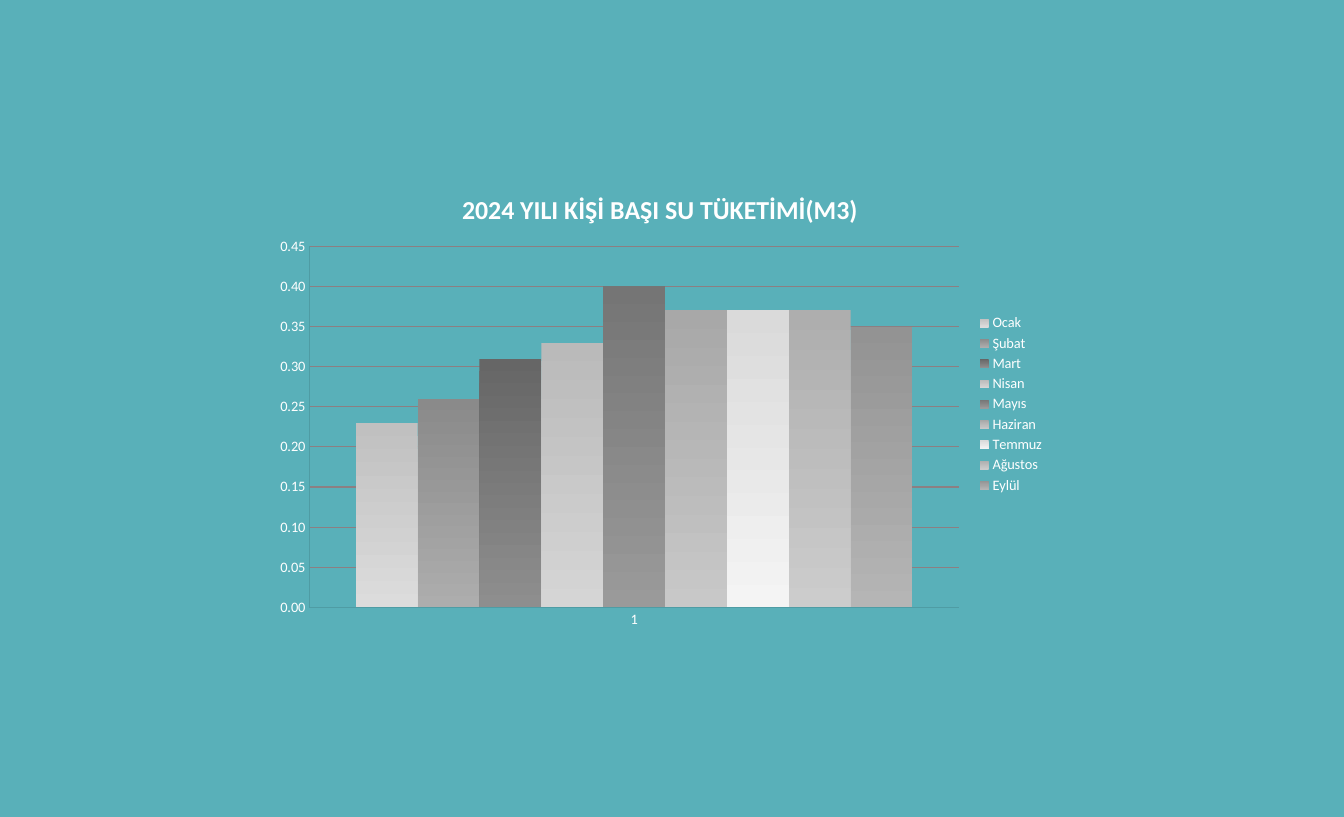
from pptx import Presentation
from pptx.chart.data import CategoryChartData
from pptx.dml.color import RGBColor
from pptx.enum.chart import XL_CHART_TYPE, XL_LEGEND_POSITION, XL_TICK_MARK
from pptx.oxml import parse_xml
from pptx.oxml.ns import nsdecls
from pptx.util import Cm, Inches, Pt

TITLE = "2024 YILI KİŞİ BAŞI SU TÜKETİMİ(M3)"
# month, consumption, top and bottom colour of the column
MONTHS = [
    ("Ocak", 0.23, "C0C0C0", "DCDCDC"),
    ("Şubat", 0.26, "8A8A8A", "ADADAD"),
    ("Mart", 0.31, "666666", "8E8E8E"),
    ("Nisan", 0.33, "BABABA", "D5D5D5"),
    ("Mayıs", 0.40, "757575", "9A9A9A"),
    ("Haziran", 0.37, "A8A8A8", "C8C8C8"),
    ("Temmuz", 0.37, "DADADA", "F4F4F4"),
    ("Ağustos", 0.37, "AEAEAE", "CCCCCC"),
    ("Eylül", 0.35, "939393", "B5B5B5"),
]
BACKGROUND, TEXT, GRID, AXIS = "59B0B9", "FFFFFF", "8C7F82", "4F9CA4"
SLIDE_SIZE_CM = (33, 20.05)
CHART_BOX = (2.56, 1.66, 7.64, 4.49)
PLOT_BOX = (2.99, 2.38, 6.28, 3.49)


def paint(color_format, hex_color):
    color_format.rgb = RGBColor.from_string(hex_color)


def style_font(font, size, bold=False):
    font.name = "Calibri"
    font.size = Pt(size)
    font.bold = bold
    paint(font.color, TEXT)


def style_line(line, hex_color):
    paint(line.color, hex_color)
    line.width = Pt(0.75)


def place_plot(chart):
    """Fix the inner plot area as fractions of the chart box."""
    left, top, width, height = CHART_BOX
    x, y, w, h = PLOT_BOX
    fractions = {"x": (x - left) / width, "y": (y - top) / height,
                 "w": w / width, "h": h / height}
    modes = "".join(f'<c:{axis}Mode val="edge"/>' for axis in "xy")
    sizes = "".join(f'<c:{key} val="{part:.4f}"/>' for key, part in fractions.items())
    layout = parse_xml(
        f'<c:layout {nsdecls("c")}><c:manualLayout><c:layoutTarget val="inner"/>'
        f"{modes}{sizes}</c:manualLayout></c:layout>")
    plot_area = chart.plots[0]._element.getparent()
    for old in plot_area.findall(layout.tag):
        plot_area.remove(old)
    plot_area.insert(0, layout)


def add_consumption_chart(slide):
    consumption = CategoryChartData(number_format="0.00")
    consumption.categories = ["1"]
    for month, value, *_ in MONTHS:
        consumption.add_series(month, [value])
    chart = slide.shapes.add_chart(
        XL_CHART_TYPE.COLUMN_CLUSTERED, *map(Inches, CHART_BOX), consumption).chart
    style_font(chart.font, 10)

    chart.has_title = True
    title = chart.chart_title.text_frame.paragraphs[0].add_run()
    title.text = TITLE
    style_font(title.font, 18, bold=True)
    chart.chart_title.include_in_layout = False

    chart.has_legend = True
    chart.legend.position = XL_LEGEND_POSITION.RIGHT
    chart.legend.include_in_layout = False
    style_font(chart.legend.font, 10)

    columns = chart.plots[0]
    columns.gap_width = 150
    columns.overlap = 0
    columns.vary_by_categories = False
    for series, (_, _, *shades) in zip(columns.series, MONTHS):
        fill = series.format.fill
        fill.gradient()
        fill.gradient_angle = 270
        for stop, shade in zip(fill.gradient_stops, shades):
            paint(stop.color, shade)

    for axis in (chart.category_axis, chart.value_axis):
        axis.major_tick_mark = axis.minor_tick_mark = XL_TICK_MARK.NONE
        style_font(axis.tick_labels.font, 10)
        style_line(axis.format.line, AXIS)
    scale = chart.value_axis
    scale.minimum_scale, scale.maximum_scale, scale.major_unit = 0, 0.45, 0.05
    scale.tick_labels.number_format = "0.00"
    scale.tick_labels.number_format_is_linked = False
    style_line(scale.major_gridlines.format.line, GRID)
    place_plot(chart)


def main():
    deck = Presentation()
    deck.slide_width, deck.slide_height = map(Cm, SLIDE_SIZE_CM)
    slide = deck.slides.add_slide(deck.slide_layouts[6])
    slide.background.fill.solid()
    paint(slide.background.fill.fore_color, BACKGROUND)
    add_consumption_chart(slide)
    deck.save("out.pptx")


if __name__ == "__main__":
    main()
